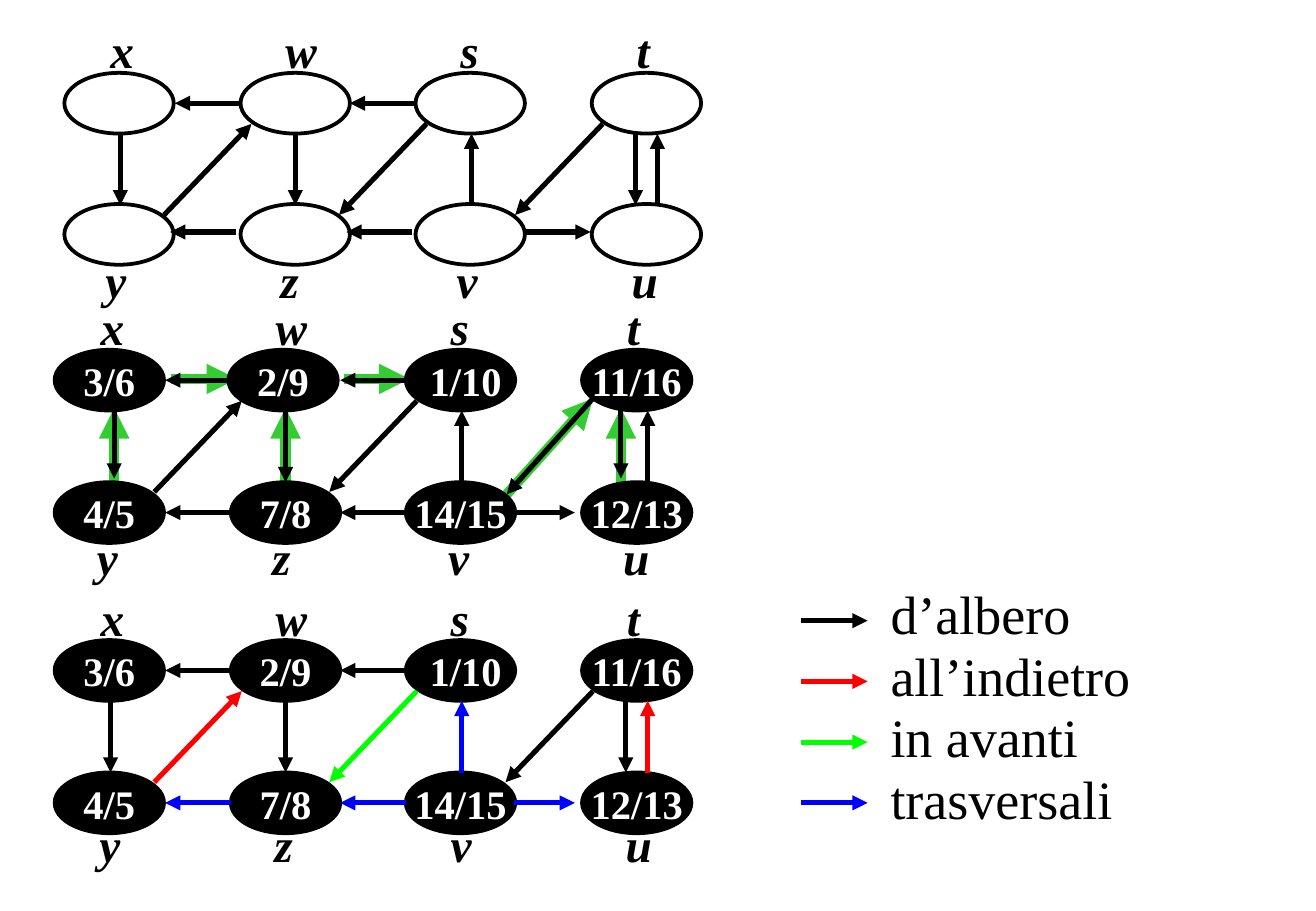
from lxml import etree
from pptx import Presentation
from pptx.dml.color import RGBColor
from pptx.enum.shapes import MSO_CONNECTOR, MSO_SHAPE
from pptx.enum.text import MSO_ANCHOR, MSO_AUTO_SIZE, PP_ALIGN
from pptx.oxml.ns import qn
from pptx.util import Pt

PX = 9144
OVAL = MSO_SHAPE.OVAL
STRAIGHT = MSO_CONNECTOR.STRAIGHT
MIDDLE = MSO_ANCHOR.MIDDLE
GROW = MSO_AUTO_SIZE.SHAPE_TO_FIT_TEXT
CENTER = PP_ALIGN.CENTER

BLACK = RGBColor(0, 0, 0)
WHITE = RGBColor(255, 255, 255)
RED = RGBColor(255, 0, 0)
GREEN = RGBColor(0, 255, 0)
BLUE = RGBColor(0, 0, 255)
DARK_GREEN = RGBColor(0x33, 0xCC, 0x33)

FACE = "Times New Roman"
NAME_FONT = {"name": FACE, "size": Pt(28), "bold": True, "italic": True}
TIME_FONT = {"name": FACE, "size": Pt(24), "bold": True}
LEGEND_FONT = {"name": FACE, "size": Pt(32)}

NODE_WIDTH, NODE_HEIGHT = 90, 50
COLUMN_STEP = 144.6
NAME_HEIGHT = 57
UPPER_NAMES_TOP = -47
UPPER = {"x": (28, 40), "w": (172, 46), "s": (316, 35), "t": (461, 31)}
LOWER = {"y": (25, 37), "z": (169, 35), "v": (314, 37), "u": (458, 42)}

EDGES = {
    "wx": (145, 25, 91, 25), "sw": (289, 25, 235, 25),
    "zy": (145, 134, 91, 134), "vz": (289, 134, 235, 134),
    "vu": (378, 134, 428, 134),
    "xy": (46, 50, 46, 109), "wz": (190, 50, 190, 109),
    "vs": (335, 109, 335, 50),
    "tu": (470, 50, 470, 109), "ut": (488, 109, 488, 50),
    "yw": (82, 117, 154, 42), "sz": (298, 42, 226, 117),
    "tv": (443, 42, 371, 117),
}
PLAIN_EDGES = EDGES | {
    "zy": (141, 131, 87, 131), "vz": (286, 131, 232, 131),
    "vu": (378, 131, 433, 131),
}
VISIT_EDGES = EDGES | {
    "xy": (49, 48, 49, 106), "tu": (466, 48, 466, 106),
    "tv": (443, 40, 372, 119),
}
PARENT_ARROWS = [
    (372, 119, 443, 40), (466, 111, 466, 48), (190, 111, 190, 48),
    (49, 111, 49, 48), (96, 24, 150, 24), (238, 24, 292, 24),
]
TIMES = {
    "x": " 3/6 ", "w": " 2/9 ", "s": " 1/10", "t": "11/16",
    "y": " 4/5 ", "z": " 7/8 ", "v": "14/15", "u": "12/13",
}
EDGE_COLORS = {
    "yw": RED, "ut": RED, "sz": GREEN,
    "zy": BLUE, "vz": BLUE, "vu": BLUE, "vs": BLUE,
}
LEGEND = {
    "d’albero": BLACK, "all’indietro": RED,
    "in avanti": GREEN, "trasversali": BLUE,
}


def emu(*lengths):
    """Turn px lengths into EMU."""
    return [round(length * PX) for length in lengths]


def write(paragraph, text, font_format, color):
    """Add one formatted run to a paragraph."""
    run = paragraph.add_run()
    run.text = text
    for attribute, value in font_format.items():
        setattr(run.font, attribute, value)
    run.font.color.rgb = color


def add_text_frame(slide, left, top, width, height):
    """Add an unwrapped text box and return its text frame."""
    frame = slide.shapes.add_textbox(*emu(left, top, width, height)).text_frame
    frame.word_wrap = False
    frame.auto_size = GROW
    return frame


def add_arrow(slide, left, top, ends, color, weight=3):
    """Draw an arrow whose ends are relative to left and top."""
    x1, y1, x2, y2 = ends
    arrow = slide.shapes.add_connector(
        STRAIGHT, *emu(left + x1, top + y1, left + x2, top + y2))
    arrow.line.color.rgb = color
    arrow.line.width = Pt(weight)
    properties = arrow.element.spPr
    etree.SubElement(properties.find(qn("a:ln")), qn("a:tailEnd"), type="triangle")
    etree.SubElement(properties, qn("a:effectLst"))


def add_node(slide, left, top, time):
    """Draw a vertex, filled when it carries its visit times."""
    node = slide.shapes.add_shape(OVAL, *emu(left, top, NODE_WIDTH, NODE_HEIGHT))
    node.shadow.inherit = False
    node.line.color.rgb = BLACK
    node.line.width = Pt(2.25)
    if not time:
        node.fill.background()
        return
    node.fill.solid()
    node.fill.fore_color.rgb = BLACK
    frame = node.text_frame
    frame.word_wrap = False
    frame.vertical_anchor = MIDDLE
    frame.paragraphs[0].alignment = CENTER
    write(frame.paragraphs[0], time, TIME_FONT, WHITE)


def add_graph(slide, left, top, edges, times, colors, row_step=109,
              lower_shift=(0, 142), node_shifts=None, parents=()):
    """Draw one graph from the corner of its first vertex."""
    for ends in parents:
        add_arrow(slide, left, top, ends, DARK_GREEN, 6)
    shift, lower_top = lower_shift
    rows = ((UPPER, 0, 0, UPPER_NAMES_TOP), (LOWER, row_step, shift, lower_top))
    for vertices, node_top, name_shift, name_top in rows:
        for column, (vertex, (name_left, name_width)) in enumerate(vertices.items()):
            node_left = round(column * COLUMN_STEP) + (node_shifts or {}).get(vertex, 0)
            add_node(slide, left + node_left, top + node_top, times.get(vertex))
            frame = add_text_frame(slide, left + name_left + name_shift,
                                   top + name_top, name_width, NAME_HEIGHT)
            write(frame.paragraphs[0], vertex, NAME_FONT, BLACK)
    for edge, ends in edges.items():
        add_arrow(slide, left, top, ends, colors.get(edge, BLACK))


def add_legend(slide, left, top):
    """Draw the key to the edge colours."""
    frame = add_text_frame(slide, left + 64, top, 218, 213)
    for index, (edge_kind, color) in enumerate(LEGEND.items()):
        add_arrow(slide, left, top + 34 + 50 * index, (0, 0, 55, 0), color)
        paragraph = frame.add_paragraph() if index else frame.paragraphs[0]
        paragraph.line_spacing = 0.95
        write(paragraph, edge_kind, LEGEND_FONT, BLACK)


def main():
    """Build the slide of depth-first search graphs."""
    deck = Presentation()
    deck.slide_width, deck.slide_height = emu(1083, 750)
    slide = deck.slides.add_slide(deck.slide_layouts[6])
    add_graph(slide, 53, 60, PLAIN_EDGES, {}, {}, row_step=108, lower_shift=(-1, 142))
    add_graph(slide, 45, 288, VISIT_EDGES, TIMES, {},
              node_shifts={"w": -2}, parents=PARENT_ARROWS)
    add_graph(slide, 45, 527, EDGES, TIMES, EDGE_COLORS, lower_shift=(2, 139))
    add_legend(slide, 659, 477)
    deck.save("out.pptx")


if __name__ == "__main__":
    main()
